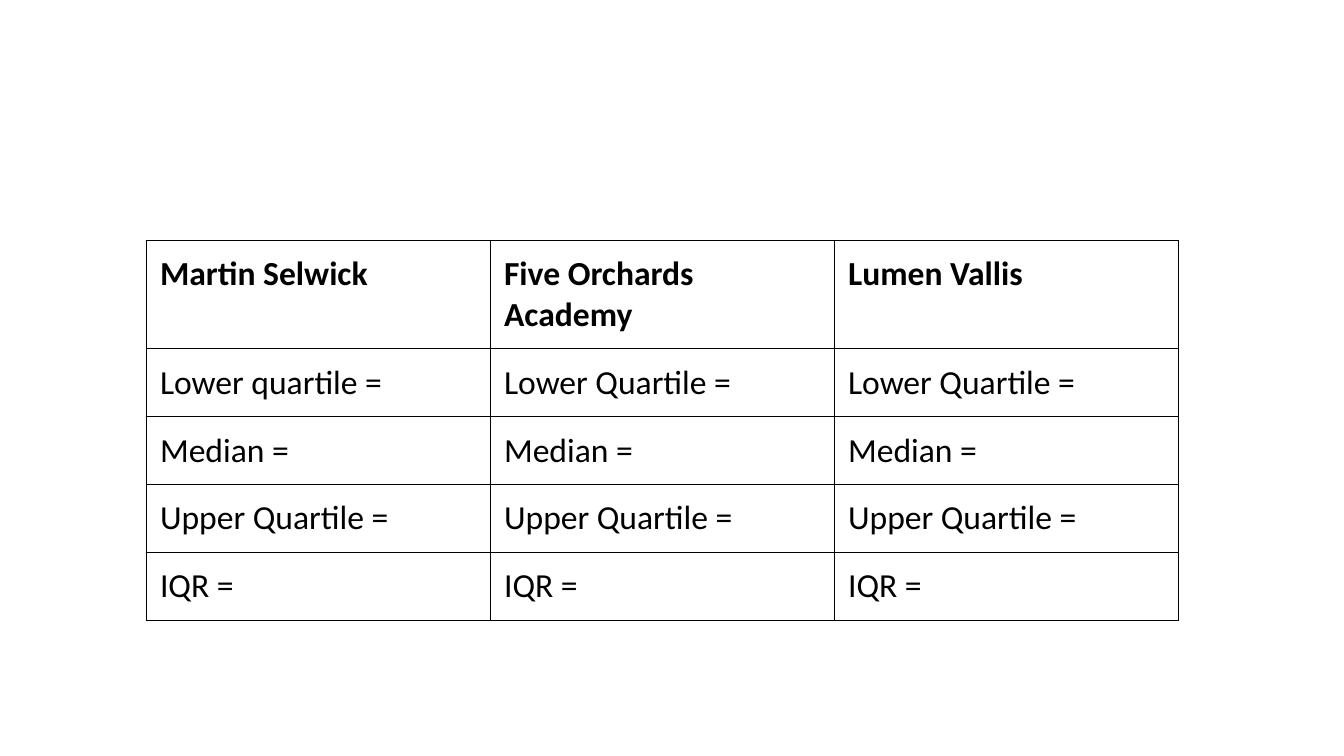
"""Build a slide with a blank quartile table for three schools."""
from dataclasses import dataclass

from lxml import etree
from pptx import Presentation
from pptx import util as u
from pptx.dml.color import RGBColor
from pptx.oxml.ns import qn
from pptx.slide import Slide
from pptx.table import _Cell


@dataclass(frozen=True)
class Theme:
    font: str = "Calibri"
    size: float = 24
    ink: str = "000000"
    border: float = 0.75
    inset: float = 9.6


@dataclass(frozen=True)
class School:
    name: str
    lower: str = "Lower Quartile ="
    median: str = "Median ="
    upper: str = "Upper Quartile ="
    iqr: str = "IQR ="

    def lines(self) -> list[str]:
        return [self.name, self.lower, self.median, self.upper, self.iqr]


@dataclass(frozen=True)
class Grid:
    left: float
    top: float
    col_width: float
    header_height: float
    row_height: float


THEME = Theme()
GRID = Grid(left=104.75, top=171.5, col_width=245.75, header_height=77.75, row_height=48.4)
SCHOOLS = [
    School("Martin Selwick", lower="Lower quartile ="),
    School("Five Orchards Academy"),
    School("Lumen Vallis"),
]


def write_text(cell: _Cell, text: str, *, bold: bool = False) -> None:
    tf = cell.text_frame
    tf.word_wrap = True
    r = tf.paragraphs[0].add_run()
    r.text = text
    r.font.name = THEME.font
    r.font.size = u.Pt(THEME.size)
    r.font.bold = bold
    r.font.color.rgb = RGBColor.from_string(THEME.ink)


def format_cell(cell: _Cell) -> None:
    cell.margin_left = cell.margin_right = u.Pt(THEME.inset)
    cell.margin_top = cell.margin_bottom = u.Pt(THEME.inset)
    cell.fill.background()
    props = cell._tc.get_or_add_tcPr()
    for i, side in enumerate(("lnL", "lnR", "lnT", "lnB")):
        ln = etree.Element(qn(f"a:{side}"), w=str(u.Pt(THEME.border)))
        fill = etree.SubElement(ln, qn("a:solidFill"))
        etree.SubElement(fill, qn("a:srgbClr"), val=THEME.ink)
        props.insert(i, ln)


def add_school_table(s: Slide, schools: list[School], grid: Grid) -> None:
    heights = [grid.header_height] + [grid.row_height] * (len(schools[0].lines()) - 1)
    table = s.shapes.add_table(
        len(heights), len(schools), u.Pt(grid.left), u.Pt(grid.top),
        u.Pt(grid.col_width * len(schools)), u.Pt(sum(heights)),
    ).table
    table.horz_banding = False
    for row, height in zip(table.rows, heights):
        row.height = u.Pt(height)
    for c, school in enumerate(schools):
        table.columns[c].width = u.Pt(grid.col_width)
        for i, line in enumerate(school.lines()):
            cell = table.cell(i, c)
            format_cell(cell)
            write_text(cell, line, bold=i == 0)


def main() -> None:
    prs = Presentation()
    prs.slide_width, prs.slide_height = u.Pt(960), u.Pt(540)
    s = prs.slides.add_slide(prs.slide_layouts.get_by_name("Blank"))
    add_school_table(s, SCHOOLS, GRID)
    prs.save("out.pptx")


if __name__ == "__main__":
    main()
